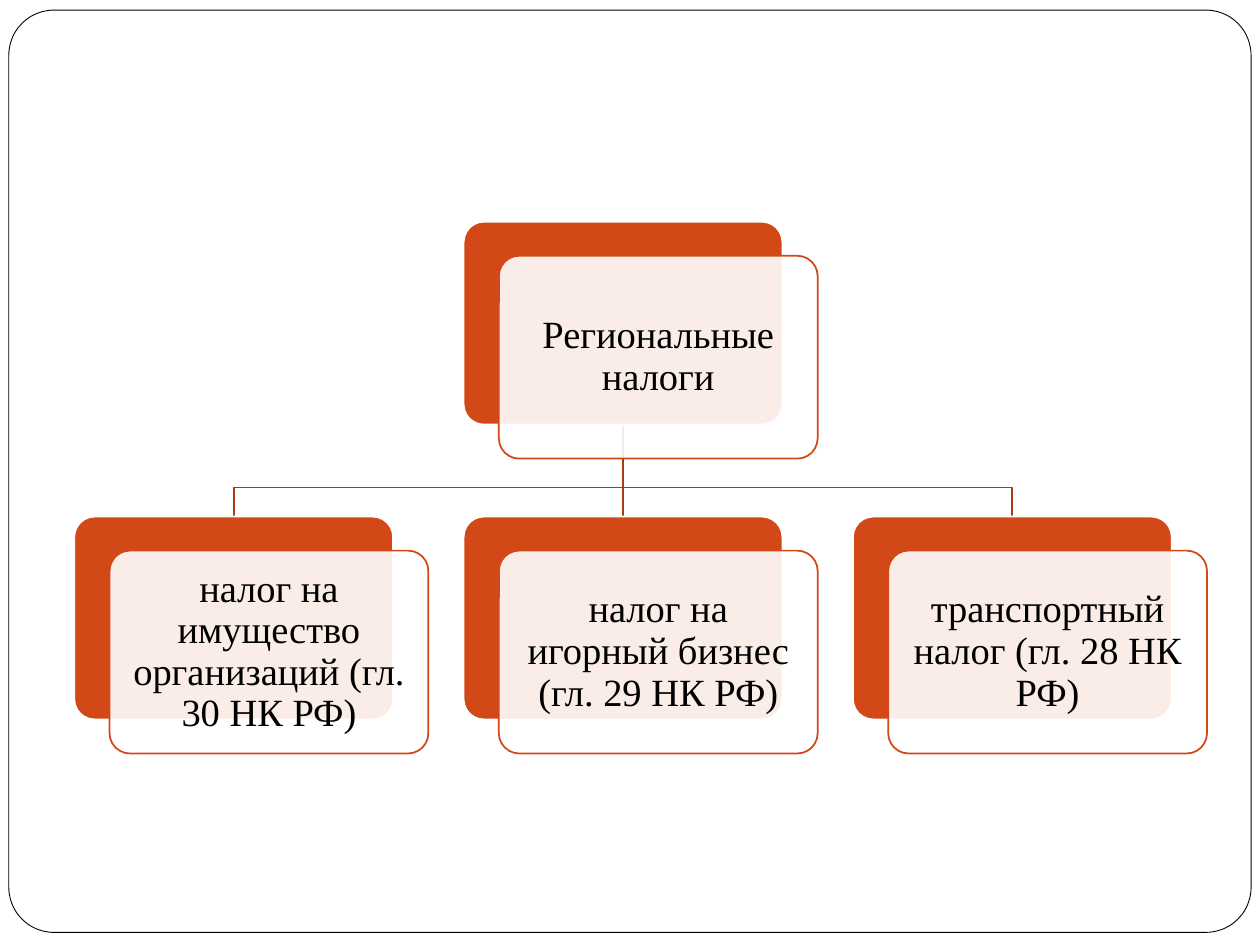
import pptx
import pptx.util
import pptx.dml.color
import pptx.enum.shapes
import pptx.enum.text
import pptx.oxml
import pptx.oxml.ns

Inches, Pt = pptx.util.Inches, pptx.util.Pt
RGB = pptx.dml.color.RGBColor.from_string
KIND = pptx.enum.shapes.MSO_SHAPE.ROUNDED_RECTANGLE
HUE = {"white": "FFFFFF", "black": "000000", "rust": "D34817", "link": "A93A12"}

deck = pptx.Presentation()
deck.slide_width, deck.slide_height = Inches(10), Inches(7.5)
slide = deck.slides.add_slide(deck.slide_layouts[6])
shapes = slide.shapes


def add_box(x, y, w, h, fill="white", line="white", width=1, round=0.1):
    box = shapes.add_shape(KIND, Inches(x), Inches(y), Inches(w), Inches(h))
    box.adjustments[0] = round
    box.shadow.inherit = False
    box.fill.solid()
    box.fill.fore_color.rgb = RGB(HUE[fill])
    box.line.color.rgb = RGB(HUE[line])
    box.line.width = Pt(width)
    return box


def put_text(box, text, size=22, font="Times New Roman", color="black", pad=0.09):
    frame = box.text_frame
    frame.word_wrap = True
    frame.vertical_anchor = pptx.enum.text.MSO_ANCHOR.MIDDLE
    frame.margin_left = frame.margin_right = Inches(pad)
    frame.margin_top = frame.margin_bottom = Inches(pad)
    para = frame.paragraphs[0]
    para.alignment = pptx.enum.text.PP_ALIGN.CENTER
    para.line_spacing = 0.9
    run = para.add_run()
    run.text = text
    run.font.size = Pt(size)
    run.font.name = font
    run.font.color.rgb = RGB(HUE[color])


# Slide frame
add_box(0.07, 0.08, 9.86, 7.32, line="black", width=0.5, round=0.049)

# Grid of the tree
wide, high = 2.53, 1.61
left, step = 0.59, 3.09
top, low = 1.76, 4.1
shift = 0.28, 0.27
mid = left + step + wide / 2
base, bend = top + high, 3.87

# Links, behind the cards
trunk = shapes.add_connector(
    pptx.enum.shapes.MSO_CONNECTOR.STRAIGHT,
    Inches(mid), Inches(base), Inches(mid), Inches(low))
trunk.line.color.rgb = RGB(HUE["link"])
trunk.line.width = Pt(1)
props = trunk._element.spPr
props.append(pptx.oxml.parse_xml(
    "<a:effectLst %s/>" % pptx.oxml.ns.nsdecls("a")))

for side in (1, -1):
    end = mid + side * step
    path = shapes.build_freeform(Inches(mid), Inches(base))
    path.add_line_segments(
        [(Inches(x), Inches(y)) for x, y in ((mid, bend), (end, bend), (end, low))],
        close=False)
    link = path.convert_to_shape()
    link.shadow.inherit = False
    link.fill.background()
    link.line.color.rgb = RGB(HUE["link"])
    link.line.width = Pt(1)

# Cards: column, top edge, text
cards = [
    (1, top, "Региональные налоги"),
    (0, low, "налог на имущество организаций (гл. 30 НК РФ)"),
    (1, low, "налог на игорный бизнес (гл. 29 НК РФ)"),
    (2, low, "транспортный налог (гл. 28 НК РФ)"),
]
backs = []
for col, y, text in cards:
    x = left + col * step
    backs.append(add_box(x, y, wide, high, fill="rust"))
    card = add_box(x + shift[0], y + shift[1], wide, high, line="rust")
    tint = card._element.spPr.find(
        pptx.oxml.ns.qn("a:solidFill")).find(pptx.oxml.ns.qn("a:srgbClr"))
    tint.append(pptx.oxml.parse_xml(
        '<a:alpha %s val="90000"/>' % pptx.oxml.ns.nsdecls("a")))
    put_text(card, text)

# Join the trunk to the root and the middle card
trunk.begin_connect(backs[0], 2)
trunk.end_connect(backs[2], 0)

deck.save("out.pptx")
